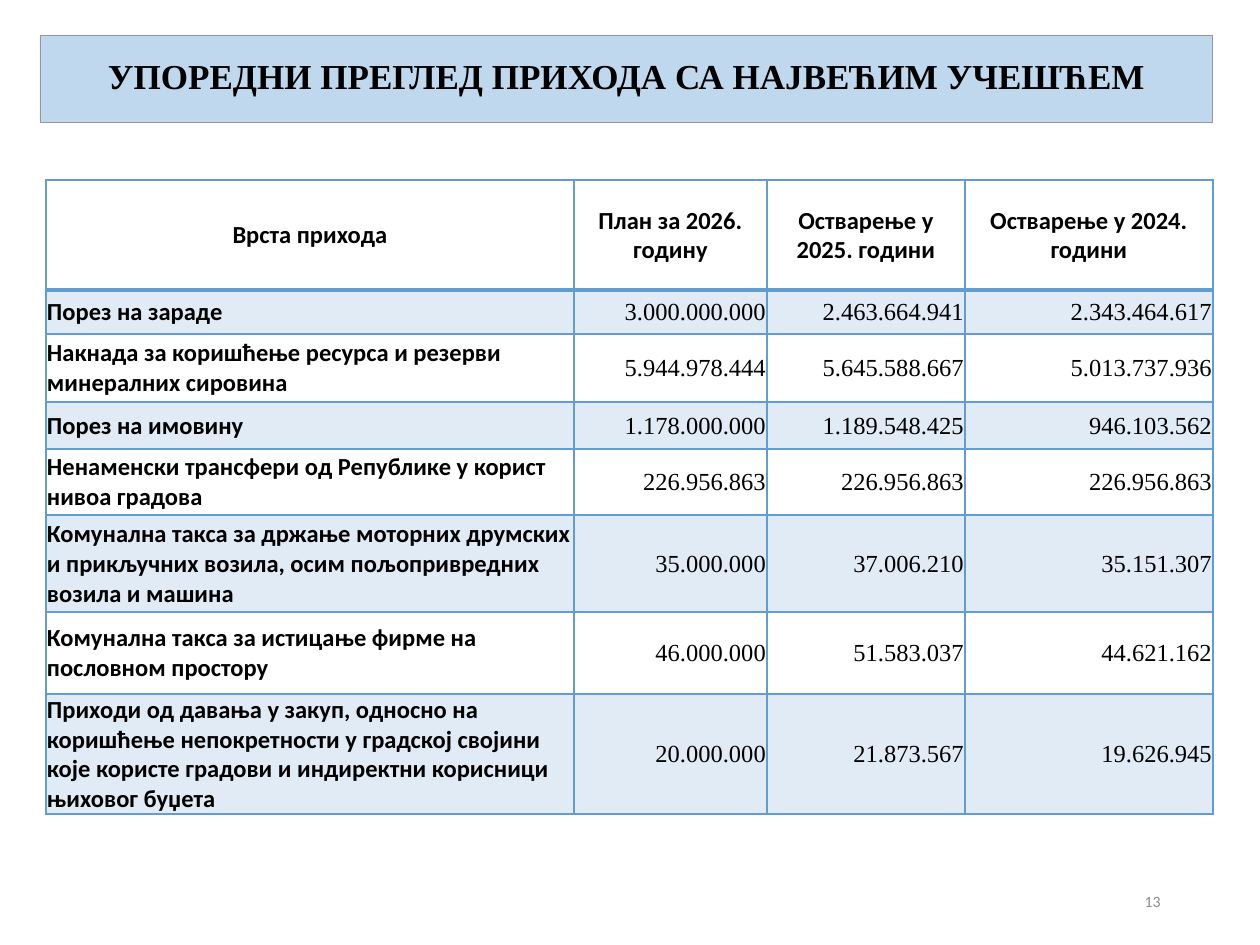
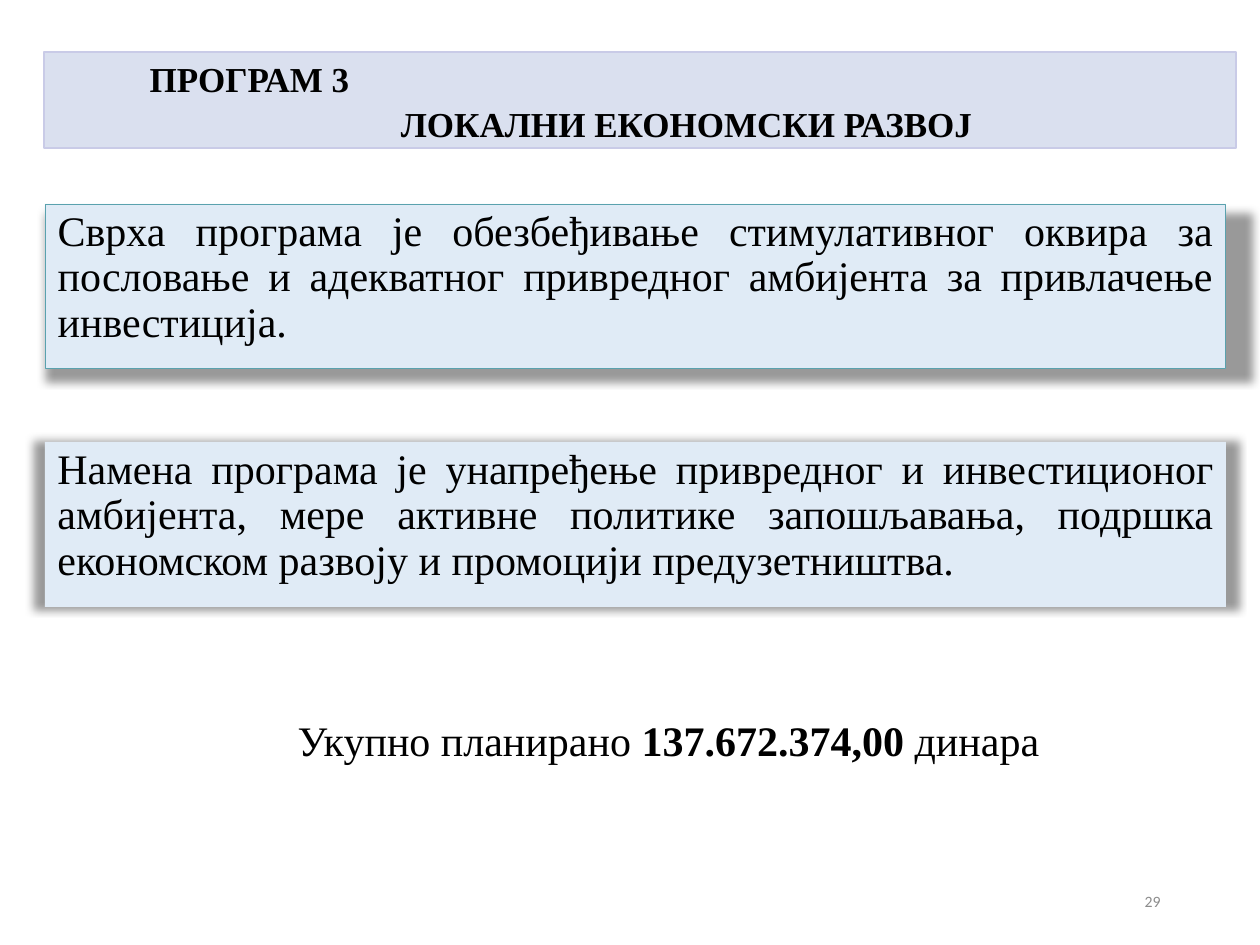
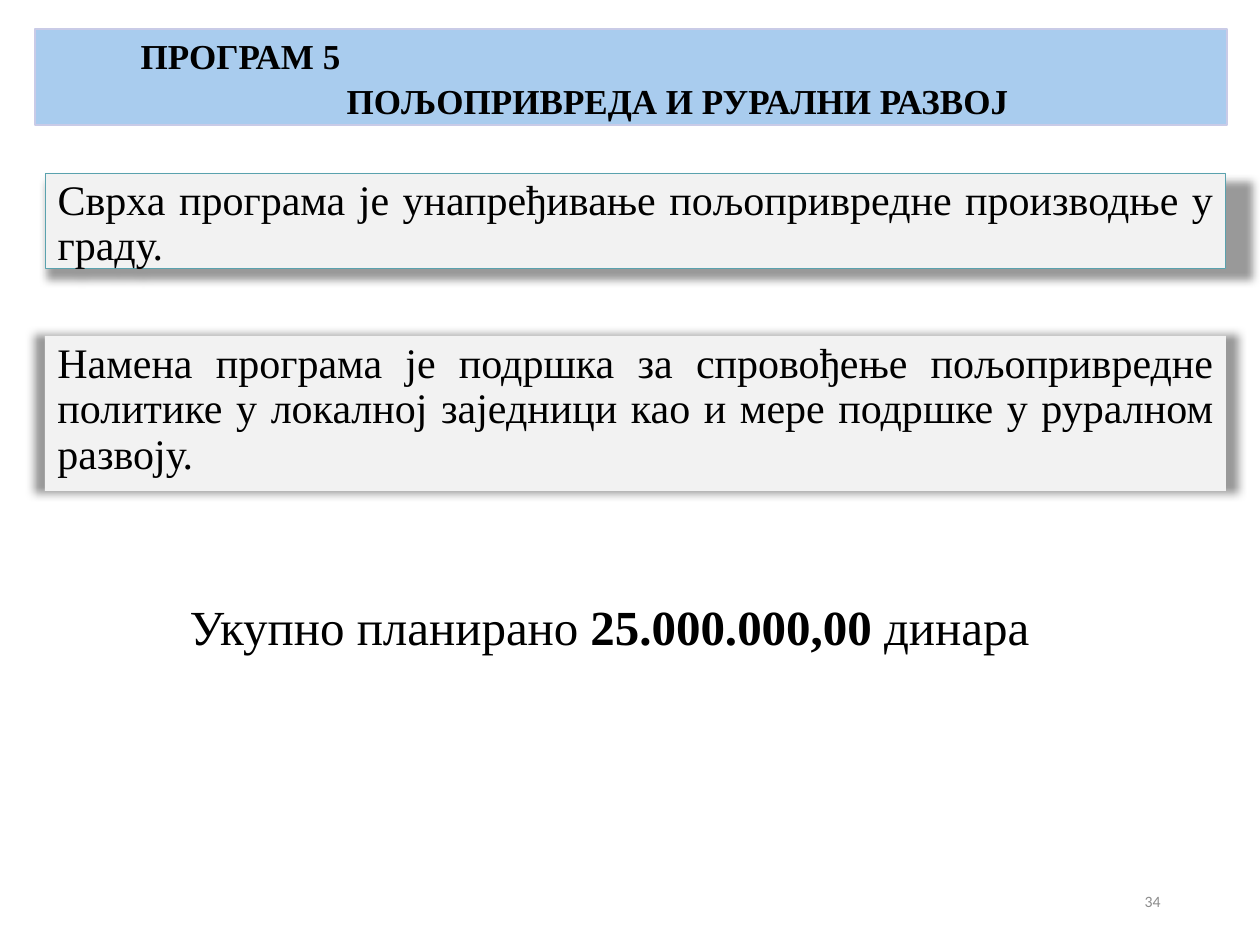
from lxml.etree import SubElement
from pptx import Presentation
from pptx.dml.color import RGBColor
from pptx.enum.shapes import MSO_SHAPE
from pptx.enum.text import MSO_ANCHOR, MSO_AUTO_SIZE, PP_ALIGN
from pptx.oxml.ns import qn
from pptx.util import Pt

SCALE = 914400 / 126
SERIF, SANS = "Times New Roman", "Calibri"
HEX = {
    "black": "000000", "white": "FFFFFF", "grey": "8C8C8C",
    "sky": "C0D8ED", "mauve": "9D90A0", "lilac": "DAE0EF",
    "edge": "C9CBE7", "azure": "A9CCEE", "teal": "5AA2AE",
    "pale": "E0EBF6", "light": "F2F2F2", "grid": "629DD1",
}
REVENUE = {
    "title": "УПОРЕДНИ ПРЕГЛЕД ПРИХОДА СА НАЈВЕЋИМ УЧЕШЋЕМ",
    "band": (40, 35, 1173, 87),
    "page": "13",
    "at": (46, 180),
    "cols": [528, 193, 198, 248],
    "rows": [110, 44, 68, 47, 66, 97, 82, 118],
    "cells": [
        ("Врста прихода", "План за 2026. годину",
         "Остварење у 2025. години", "Остварење у 2024. години"),
        ("Порез на зараде", "3.000.000.000", "2.463.664.941", "2.343.464.617"),
        ("Накнада за коришћење ресурса и резерви минералних сировина",
         "5.944.978.444", "5.645.588.667", "5.013.737.936"),
        ("Порез на имовину", "1.178.000.000", "1.189.548.425", "946.103.562"),
        ("Ненаменски трансфери од Републике у корист нивоа градова",
         "226.956.863", "226.956.863", "226.956.863"),
        ("Комунална такса за држање моторних друмских и прикључних возила, "
         "осим пољопривредних возила и машина",
         "35.000.000", "37.006.210", "35.151.307"),
        ("Комунална такса за истицање фирме на пословном простору",
         "46.000.000", "51.583.037", "44.621.162"),
        ("Приходи од давања у закуп, односно на коришћење непокретности у "
         "градској својини које користе градови и индиректни корисници "
         "њиховог буџета",
         "20.000.000", "21.873.567", "19.626.945"),
    ],
}
PROGRAMS = [
    {
        "title": "ПРОГРАМ 3\nЛОКАЛНИ ЕКОНОМСКИ РАЗВОЈ",
        "band": (44, 52, 1192, 96), "tint": "lilac", "fill": "pale",
        "aim": "Сврха програма је обезбеђивање стимулативног оквира за "
               "пословање и адекватног привредног амбијента за привлачење "
               "инвестиција.",
        "aim_at": (45, 204, 1181, 165),
        "use": "Намена програма је унапређење привредног и инвестиционог "
               "амбијента, мере активне политике запошљавања, подршка "
               "економском развоју и промоцији предузетништва.",
        "use_at": (45, 442, 1181, 165),
        "sum": "137.672.374,00", "sum_at": (223, 708, 891, 63), "size": 24,
        "page": "29",
    },
    {
        "title": "ПРОГРАМ 5\nПОЉОПРИВРЕДА И РУРАЛНИ РАЗВОЈ",
        "band": (35, 29, 1192, 96), "tint": "azure", "fill": "light",
        "aim": "Сврха програма је унапређивање пољопривредне производње у "
               "граду.",
        "aim_at": (45, 173, 1181, 96),
        "use": "Намена програма је подршка за спровођење пољопривредне "
               "политике у локалној заједници као и мере подршке у руралном "
               "развоју.",
        "use_at": (45, 336, 1181, 155),
        "sum": "25.000.000,00", "sum_at": (164, 590, 891, 72), "size": 28,
        "page": "34",
    },
]


def px(n):
    return round(n * SCALE)


def rgb(name):
    return RGBColor.from_string(HEX[name])


def place(shape, box):
    shape.left, shape.top, shape.width, shape.height = map(px, box)


def paint(shape, fill, line=None, width=0.5):
    shape.fill.solid()
    shape.fill.fore_color.rgb = rgb(fill)
    if line:
        shape.line.color.rgb = rgb(line)
        shape.line.width = Pt(width)
    else:
        shape.line.fill.background()
    shape.shadow.inherit = False


def style(frame, size, align, bold=False, face=SERIF, color="black", gap=1):
    frame.word_wrap = True
    for para in frame.paragraphs:
        para.alignment = align
        para.line_spacing = gap
        para.space_before = Pt(0)
        for run in para.runs:
            font = run.font
            font.name, font.size, font.bold = face, Pt(size), bold
            font.color.rgb = rgb(color)


def shade(shape, anchor, dist):
    effects = shape.element.spPr.find(qn("a:effectLst"))
    glow = SubElement(effects, qn("a:outerShdw"), blurRad=str(Pt(5)),
                      dist=str(Pt(dist)), dir="5400000", sx="102000",
                      sy="102000", algn=anchor, rotWithShape="0")
    tone = SubElement(glow, qn("a:srgbClr"), val=HEX["black"])
    SubElement(tone, qn("a:alpha"), val="40000")


def add_band(slide, data, fill, line, width, gap):
    band = slide.shapes.title
    place(band, data["band"])
    paint(band, fill, line, width)
    frame = band.text_frame
    frame.text = data["title"]
    frame.auto_size = MSO_AUTO_SIZE.NONE
    frame.vertical_anchor = MSO_ANCHOR.MIDDLE
    style(frame, 20, PP_ALIGN.CENTER, True, gap=gap)
    return frame


def add_page(slide, number):
    box = slide.shapes.add_textbox(*map(px, (890, 876, 283, 50)))
    frame = box.text_frame
    frame.text = number
    frame.vertical_anchor = MSO_ANCHOR.MIDDLE
    style(frame, 9, PP_ALIGN.RIGHT, face=SANS, color="grey")


def add_panel(shape, text, box, fill, line, anchor, dist):
    place(shape, box)
    paint(shape, fill, line)
    shade(shape, anchor, dist)
    frame = shape.text_frame
    frame.text = text
    frame.auto_size = MSO_AUTO_SIZE.NONE
    frame.vertical_anchor = MSO_ANCHOR.TOP
    props = frame.paragraphs[0]._p.get_or_add_pPr()
    props.set("marL", "0")
    props.set("indent", "0")
    SubElement(props, qn("a:buNone"))
    style(frame, 24, PP_ALIGN.JUSTIFY, gap=0.9)


def frame_cell(cell, head, under):
    props = cell._tc.get_or_add_tcPr()
    widths = {"L": 1, "R": 1, "T": 2 if under else 1, "B": 2 if head else 1}
    for side, width in widths.items():
        edge = SubElement(props, qn("a:ln" + side), w=str(Pt(width)))
        fill = SubElement(edge, qn("a:solidFill"))
        SubElement(fill, qn("a:srgbClr"), val=HEX["grid"])


def add_grid(slide, data):
    cols, rows = data["cols"], data["rows"]
    box = (*data["at"], sum(cols), sum(rows))
    table = slide.shapes.add_table(len(rows), len(cols), *map(px, box)).table
    table.first_row = table.horz_banding = False
    for col, width in zip(table.columns, cols):
        col.width = px(width)
    for r, (row, height) in enumerate(zip(table.rows, rows)):
        row.height = px(height)
        for c, cell in enumerate(row.cells):
            cell.text = data["cells"][r][c]
            cell.vertical_anchor = MSO_ANCHOR.MIDDLE
            cell.margin_left = cell.margin_right = cell.margin_top = px(1)
            cell.margin_bottom = 0
            frame_cell(cell, r == 0, r == 1)
            cell.fill.solid()
            cell.fill.fore_color.rgb = rgb("pale" if r % 2 else "white")
            label = r == 0 or c == 0
            align = (PP_ALIGN.CENTER if r == 0 else
                     PP_ALIGN.LEFT if c == 0 else PP_ALIGN.RIGHT)
            style(cell.text_frame, 14, align, label, SANS if label else SERIF)


def add_sum(slide, data):
    frame = slide.shapes.add_textbox(*map(px, data["sum_at"])).text_frame
    para = frame.paragraphs[0]
    for text in ("Укупно планирано ", data["sum"], " динара"):
        para.add_run().text = text
    style(frame, data["size"], PP_ALIGN.CENTER)
    para.runs[1].font.bold = True


def add_revenue(deck, data):
    slide = deck.slides.add_slide(deck.slide_layouts[5])
    add_band(slide, data, "sky", "mauve", 0.5, 0.9)
    add_grid(slide, data)
    add_page(slide, data["page"])


def add_program(deck, data):
    slide = deck.slides.add_slide(deck.slide_layouts[1])
    frame = add_band(slide, data, data["tint"], "edge", 1, 1.05)
    first = frame.paragraphs[0]
    first.alignment = PP_ALIGN.LEFT
    first._p.get_or_add_pPr().set("marL", str(px(93)))
    add_panel(slide.placeholders[1], data["aim"], data["aim_at"],
              data["fill"], "teal", "tl", 2.5)
    panel = slide.shapes.add_shape(MSO_SHAPE.RECTANGLE, 0, 0, 0, 0)
    add_panel(panel, data["use"], data["use_at"], data["fill"], None, "ctr", 0)
    add_sum(slide, data)
    add_page(slide, data["page"])


def main():
    deck = Presentation()
    deck.slide_width, deck.slide_height = px(1260), px(945)
    add_revenue(deck, REVENUE)
    for data in PROGRAMS:
        add_program(deck, data)
    deck.save("out.pptx")


if __name__ == "__main__":
    main()
